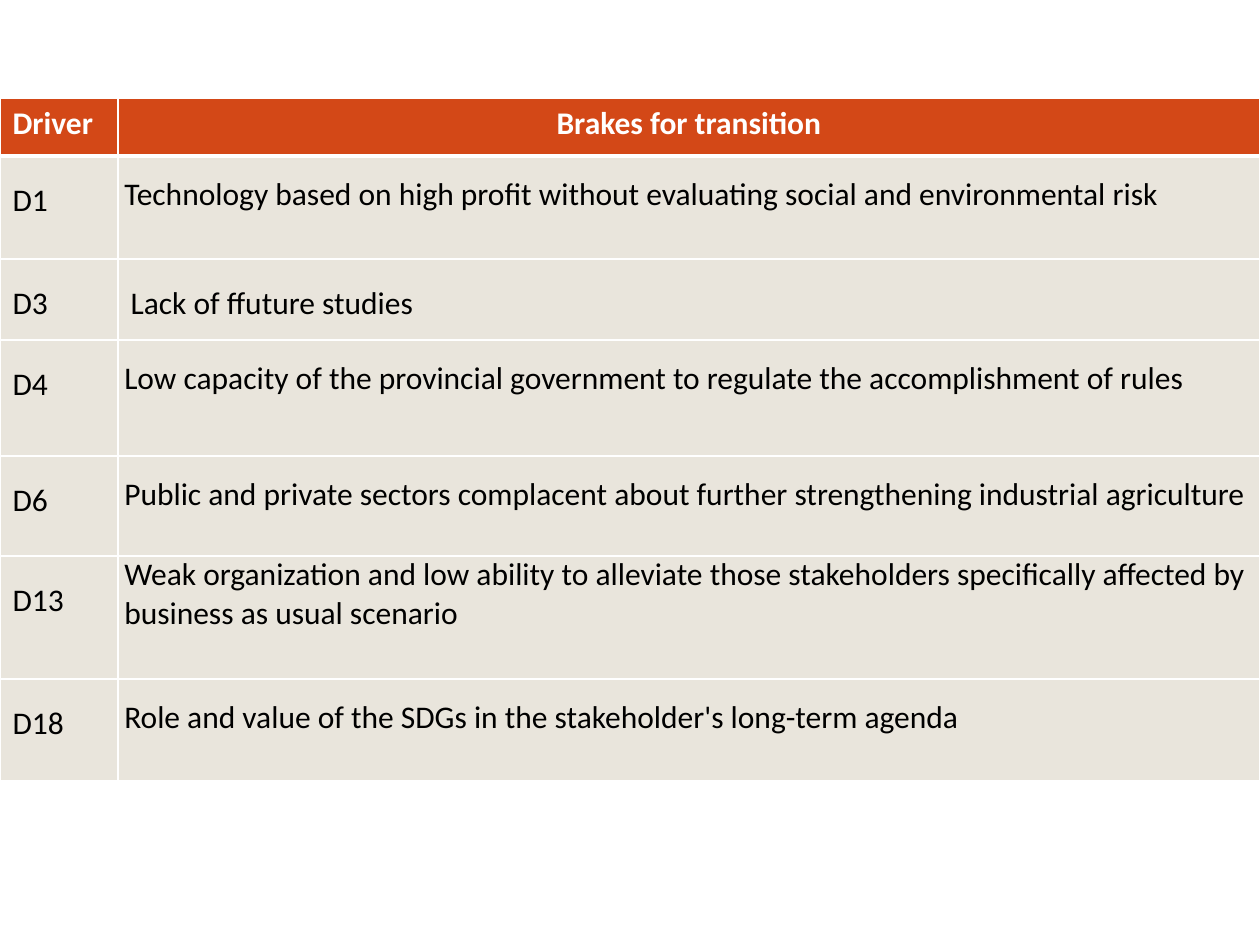
import pptx
import pptx.dml.color
import pptx.enum.text
import pptx.oxml
import pptx.oxml.ns
import pptx.util

PX_PER_INCH = 126
TABLE_TOP = 98
COLUMN_WIDTHS = [118, 1142]
ROW_HEIGHTS = [58, 103, 81, 116, 100, 123, 102]
HEADER_FILL, BODY_FILL, WHITE, BLACK = "D34817", "E9E5DC", "FFFFFF", "000000"
DEFAULT_MARGINS = (0.1, 0.05)
NARROW_MARGINS = (0.05, 0)
HEADER = ("Driver", "Brakes for transition")
BRAKES = [
    ("D1", "Technology based on high profit without evaluating social and environmental risk", {}),
    ("D3", "Lack of ffuture studies", {"margins": DEFAULT_MARGINS}),
    ("D4", "Low capacity of the provincial government to regulate the accomplishment of rules", {}),
    ("D6", "Public and private sectors complacent about further strengthening industrial agriculture", {}),
    ("D13", "Weak organization and low ability to alleviate those stakeholders specifically "
            "affected by business as usual scenario", {"line_spacing": 1.0}),
    ("D18", "Role and value of the SDGs in the stakeholder's long-term agenda", {}),
]


def px(length):
    """Turn a length in px into EMU."""
    return pptx.util.Emu(round(length * 914400 / PX_PER_INCH))


def colour(value):
    """Turn a hex string into a colour."""
    return pptx.dml.color.RGBColor.from_string(value)


def write_text(cell, text, *, font_colour=BLACK, bold=False, alignment="LEFT",
               line_spacing=1.5, margins=DEFAULT_MARGINS):
    """Write one formatted paragraph into a table cell."""
    cell.margin_left = cell.margin_right = pptx.util.Inches(margins[0])
    cell.margin_top = cell.margin_bottom = pptx.util.Inches(margins[1])
    paragraph = cell.text_frame.paragraphs[0]
    paragraph.alignment = getattr(pptx.enum.text.PP_ALIGN, alignment)
    paragraph.line_spacing = line_spacing
    run = paragraph.add_run()
    run.text = text
    run.font.name = "Calibri"
    run.font.size = pptx.util.Pt(18)
    run.font.bold = bold
    run.font.color.rgb = colour(font_colour)


def style_cell(cell, fill, top=1, bottom=1):
    """Give a cell white borders, with widths in points, and a solid fill."""
    properties = cell._tc.get_or_add_tcPr()
    for side, width in (("L", 1), ("R", 1), ("T", top), ("B", bottom)):
        properties.append(pptx.oxml.parse_xml(
            f'<a:ln{side} {pptx.oxml.ns.nsdecls("a")} w="{pptx.util.Pt(width)}">'
            f'<a:solidFill><a:srgbClr val="{WHITE}"/></a:solidFill></a:ln{side}>'))
    cell.fill.solid()
    cell.fill.fore_color.rgb = colour(fill)


def add_brakes_table(slide):
    """Add the table of drivers and their brakes."""
    table = slide.shapes.add_table(
        len(ROW_HEIGHTS), len(COLUMN_WIDTHS), 0, px(TABLE_TOP),
        px(sum(COLUMN_WIDTHS)), px(sum(ROW_HEIGHTS))).table
    for column, width in zip(table.columns, COLUMN_WIDTHS):
        column.width = px(width)
    for row, height in zip(table.rows, ROW_HEIGHTS):
        row.height = px(height)
    for index, (text, alignment) in enumerate(zip(HEADER, ("LEFT", "CENTER"))):
        cell = table.cell(0, index)
        style_cell(cell, HEADER_FILL, bottom=3)
        write_text(cell, text, font_colour=WHITE, bold=True, alignment=alignment, line_spacing=1.0)
    for index, (driver, brake, text_format) in enumerate(BRAKES, start=1):
        for cell in table.rows[index].cells:
            style_cell(cell, BODY_FILL, top=3 if index == 1 else 1)
        write_text(table.cell(index, 0), driver)
        write_text(table.cell(index, 1), brake, **{"margins": NARROW_MARGINS, **text_format})


def main():
    """Build the slide and save it."""
    presentation = pptx.Presentation()
    presentation.slide_width = pptx.util.Inches(10)
    presentation.slide_height = pptx.util.Inches(7.5)
    slide = presentation.slides.add_slide(presentation.slide_layouts[6])
    add_brakes_table(slide)
    presentation.save("out.pptx")


if __name__ == "__main__":
    main()
